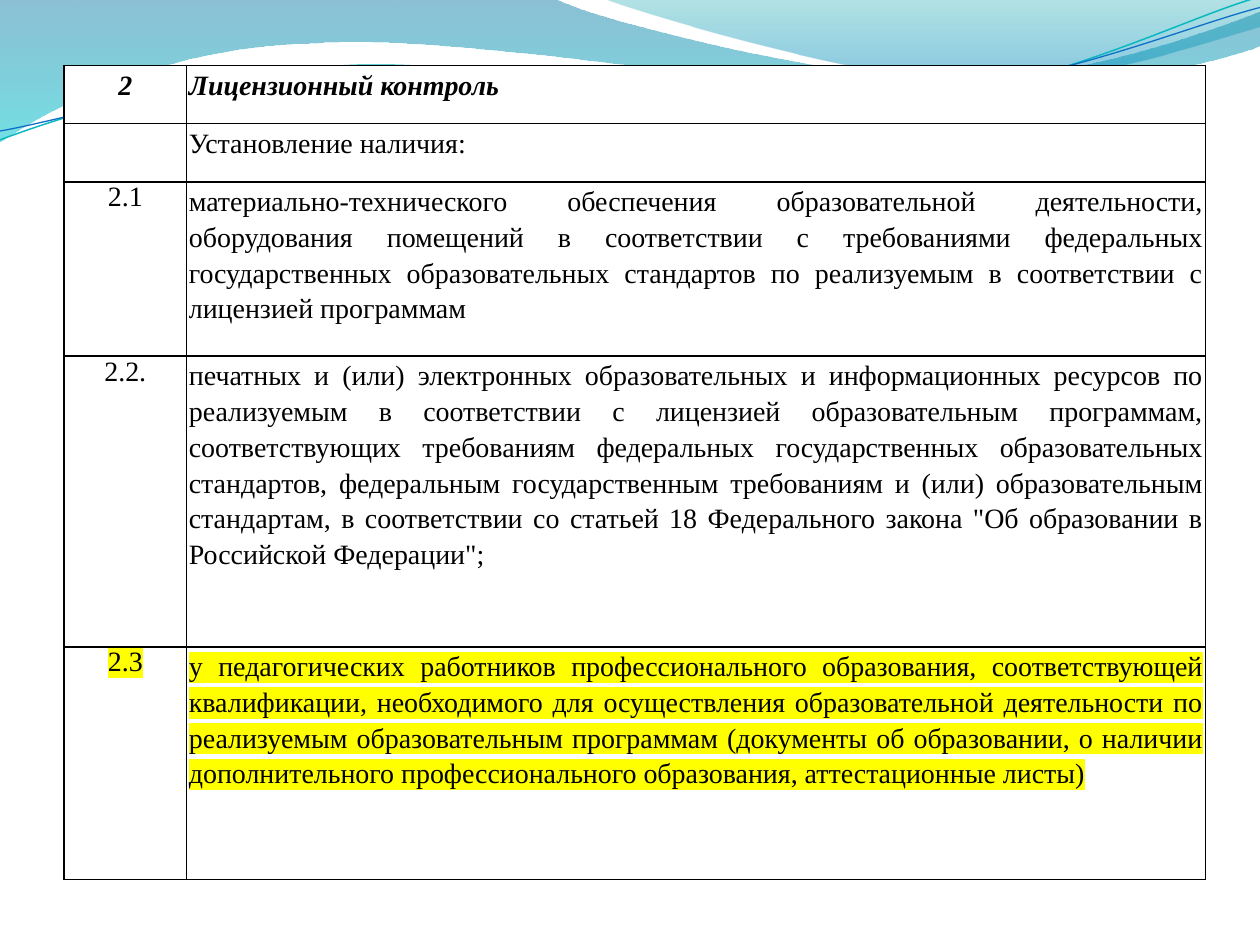
import math

from lxml import etree
from pptx import Presentation
from pptx import util as u
from pptx.dml.color import RGBColor
from pptx.enum import text
from pptx.oxml.ns import qn

BLACK = RGBColor(0, 0, 0)
WHITE = RGBColor(255, 255, 255)
BLUE = RGBColor(0x00, 0x74, 0xA1)
CYAN = RGBColor(0x00, 0xC6, 0xCF)
TEAL = RGBColor(0x00, 0xA1, 0xA9)
SKY = RGBColor(0x00, 0x8B, 0xBF)
AQUA = RGBColor(0x0A, 0xB8, 0xBF)
ROYAL = RGBColor(0x0F, 0x6F, 0xC6)
YELLOW = RGBColor(0xFF, 0xFF, 0x00)
FONT = "Times New Roman"
TILT = -2.7

# Outlines: a pair is a straight step, six numbers are a Bezier step
WIDE = [(0, 0), (4.4, -0.01), (4.76, 0.17, 6.64, 0.63, 7.58, 0.63),
        (8.53, 0.63, 9.58, 0.26, 10, 0.09), (10.01, 0.36),
        (9.83, 0.44, 8.7, 0.76, 7.46, 0.75), (6.22, 0.75, 3.82, 0.28, 2.57, 0.34),
        (1.29, 0.36, 0.46, 0.83, -0.01, 1.13), (0, 0)]
SMALL = [(4.79, -0.01), (5.09, 0.11, 6.82, 0.62, 7.69, 0.65),
         (8.56, 0.69, 9.61, 0.32, 10, 0.21), (10, 0), (4.79, -0.01)]
UPPER = [(0, 1.11), (0.48, 0.93, 1.58, 0.57, 2.77, 0.52),
         (3.95, 0.47, 5.93, 0.89, 7.13, 0.8), (8.33, 0.71, 9.38, 0.15, 9.98, -0.02)]
LOWER = [(0, 1.04), (0.47, 0.96, 1.64, 0.61, 2.83, 0.56),
         (4.03, 0.51, 5.97, 0.84, 7.17, 0.75), (8.36, 0.67, 9.41, 0.21, 10, 0.06)]

# Height share, number, wording
ROWS = [
    (2, "2", "Лицензионный контроль"),
    (2, "", "Установление наличия:"),
    (6, "2.1", "материально-технического обеспечения образовательной деятельности, "
     "оборудования помещений в соответствии с требованиями федеральных "
     "государственных образовательных стандартов по реализуемым в соответствии "
     "с лицензией программам"),
    (10, "2.2.", "печатных и (или) электронных образовательных и информационных "
     "ресурсов по реализуемым в соответствии с лицензией образовательным программам, "
     "соответствующих требованиям федеральных государственных образовательных "
     "стандартов, федеральным государственным требованиям и (или) образовательным "
     "стандартам, в соответствии со статьей 18 Федерального закона \"Об образовании "
     "в Российской Федерации\";"),
    (8, "2.3", "у педагогических работников профессионального образования, "
     "соответствующей квалификации, необходимого для осуществления образовательной "
     "деятельности по реализуемым образовательным программам (документы об "
     "образовании, о наличии дополнительного профессионального образования, "
     "аттестационные листы)"),
]


def turn(dot, mid, angle):
    """Turn a point clockwise about mid."""
    c, s = math.cos(math.radians(angle)), math.sin(math.radians(angle))
    x, y = dot[0] - mid[0], dot[1] - mid[1]
    return mid[0] + x * c - y * s, mid[1] + x * s + y * c


def draw(slide, steps, close, mid=(0, 0), angle=0):
    """Build an outline, then join the knots of each Bezier step."""
    knots = [turn(step[i:i + 2], mid, angle)
             for step in steps for i in range(0, len(step), 2)]
    dots = [(u.Inches(x), u.Inches(y)) for x, y in knots]
    pen = slide.shapes.build_freeform(*dots[0])
    pen.add_line_segments(dots[1:], close=close)
    shape = pen.convert_to_shape()
    shape.shadow.inherit = False
    lines = iter(list(shape._element.iter(qn("a:lnTo"))))
    for step in steps[1:]:
        line = next(lines)
        if len(step) == 6:
            curve = etree.Element(qn("a:cubicBezTo"))
            line.addprevious(curve)
            for part in (line, next(lines), next(lines)):
                curve.append(part[0])
                part.getparent().remove(part)
    return shape


def add_wave(slide, steps, stops):
    shape = draw(slide, steps, True)
    shape.line.fill.background()
    shape.fill.gradient()
    shape.fill.gradient_angle = 270
    for stop, (place, color, _) in zip(shape.fill.gradient_stops, stops):
        stop.position = place
        stop.color.rgb = color
    tints = shape._element.spPr.iter(qn("a:srgbClr"))
    for tint, (_, _, alpha) in zip(tints, stops):
        etree.SubElement(tint, qn("a:alpha"), val=str(alpha * 1000))


def add_curve(slide, steps, mid, color, width):
    shape = draw(slide, steps, False, mid, -TILT)
    shape.rotation = TILT
    shape.fill.background()
    shape.line.color.rgb = color
    shape.line.width = u.Pt(width)


def put_text(cell, words, align=None, space=None, after=None, bold=False, mark=None):
    par = cell.text_frame.paragraphs[0]
    par.alignment, par.line_spacing = align, space
    if after:
        par.space_after = u.Pt(after)
    if not words:
        return
    run = par.add_run()
    run.text = words
    font = run.font
    font.name, font.size = FONT, u.Pt(16)
    font.bold = font.italic = bold
    font.color.rgb = BLACK
    if mark:
        light = etree.Element(qn("a:highlight"))
        etree.SubElement(light, qn("a:srgbClr"), val=str(mark))
        run._r.rPr.find(qn("a:solidFill")).addnext(light)


def style_cell(cell):
    cell.margin_left = cell.margin_right = u.Inches(0.02)
    cell.margin_top = cell.margin_bottom = 0
    cell.fill.solid()
    cell.fill.fore_color.rgb = WHITE
    props = cell._tc.get_or_add_tcPr()
    for i, side in enumerate(("lnL", "lnR", "lnT", "lnB")):
        line = etree.Element(qn("a:" + side), w=str(u.Pt(1)))
        fill = etree.SubElement(line, qn("a:solidFill"))
        etree.SubElement(fill, qn("a:srgbClr"), val=str(BLACK))
        props.insert(i, line)


def add_grid(slide, left, top, width, height):
    grid = slide.shapes.add_table(len(ROWS), 2, left, top, width, height).table
    grid.first_row = grid.horz_banding = False
    grid.columns[0].width = u.Inches(0.97)
    grid.columns[1].width = width - u.Inches(0.97)
    total = sum(row[0] for row in ROWS)
    for i, (share, label, words) in enumerate(ROWS):
        grid.rows[i].height = height * share // total
        head = i == 0
        look = dict(bold=head, mark=YELLOW if i == len(ROWS) - 1 else None)
        for cell in grid.rows[i].cells:
            style_cell(cell)
        put_text(grid.cell(i, 0), label, align=text.PP_ALIGN.CENTER,
                 space=1.15 if head else None, after=10 if head else None, **look)
        put_text(grid.cell(i, 1), words, space=1.15,
                 align=text.PP_ALIGN.JUSTIFY if i > 1 else None, **look)


def main():
    deck = Presentation()
    deck.slide_width, deck.slide_height = u.Inches(10), u.Inches(7.5)
    slide = deck.slides.add_slide(deck.slide_layouts[6])
    # Waves along the top edge
    add_wave(slide, WIDE, [(0, BLUE, 45), (1, CYAN, 55)])
    add_wave(slide, SMALL, [(0, TEAL, 30), (0.8, SKY, 45)])
    add_curve(slide, UPPER, (4.99, 0.58), AQUA, 0.85)
    add_curve(slide, LOWER, (5, 0.59), ROYAL, 0.75)
    # Checklist
    add_grid(slide, u.Inches(0.51), u.Inches(0.52), u.Inches(9.06), u.Inches(6.46))
    deck.save("out.pptx")


if __name__ == "__main__":
    main()
